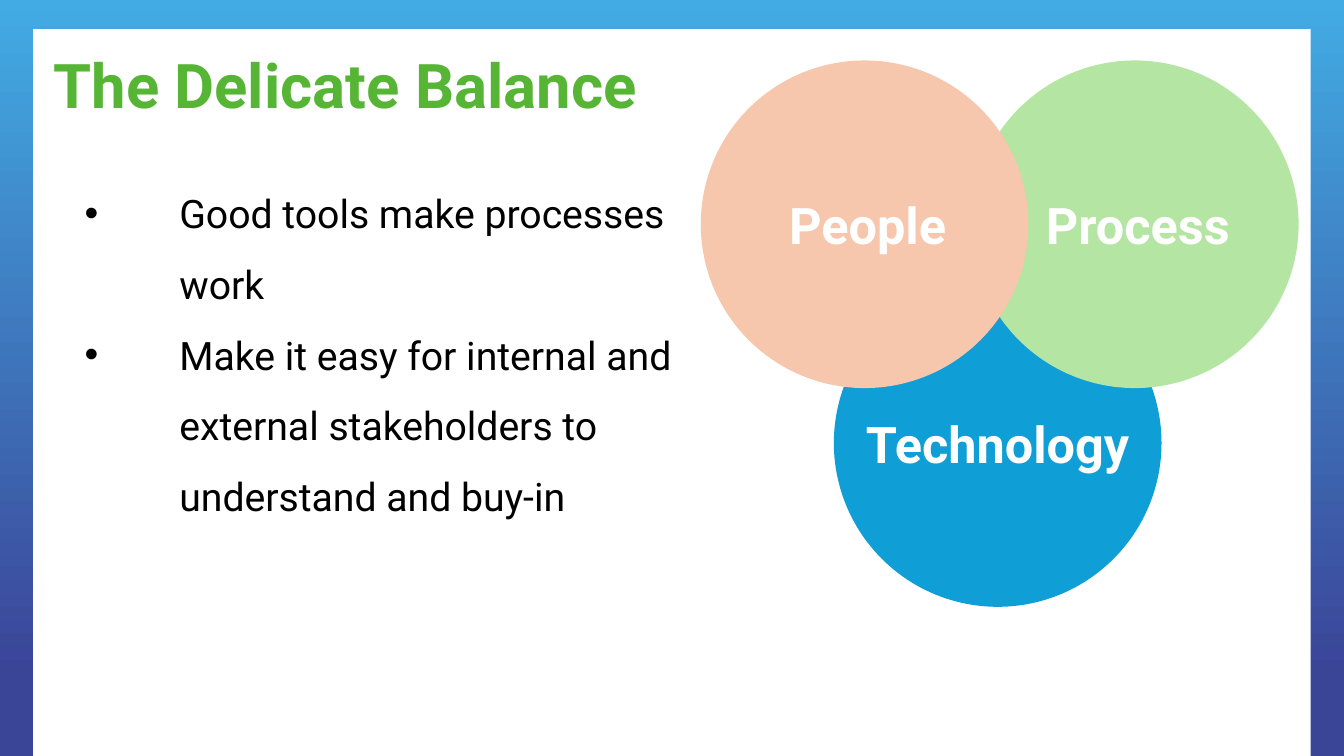
from lxml import etree
from pptx import Presentation
from pptx.dml.color import RGBColor
from pptx.enum.shapes import MSO_SHAPE
from pptx.enum.text import MSO_ANCHOR, PP_ALIGN
from pptx.oxml.ns import qn
from pptx.util import Inches, Pt

RECT, OVAL = MSO_SHAPE.RECTANGLE, MSO_SHAPE.OVAL
MID, LEFT, CENTER = MSO_ANCHOR.MIDDLE, PP_ALIGN.LEFT, PP_ALIGN.CENTER

# Content
TITLE = "The Delicate Balance"
POINTS = [
    "Good tools make processes work",
    "Make it easy for internal and external stakeholders to understand and buy-in",
]
# name, circle left, circle top, label inset from the circle's left
CIRCLES = [
    ("Technology", 8.27, 2.77, 0),
    ("Process", 9.63, 0.6, 0.06),
    ("People", 6.95, 0.6, 0.06),
]

# Style
COLORS = {
    "Technology": "0F9ED5", "Process": "B4E5A2", "People": "F6C6AD",
    "sky": "42ABE3", "navy": "3B4598", "title": "57B535",
    "white": "FFFFFF", "black": "000000",
}
FONTS = {
    "title": {"name": "Roboto", "size": Pt(44), "bold": True},
    "body": {"name": "Roboto", "size": Pt(28), "bold": False},
    "label": {"name": "Roboto", "size": Pt(36), "bold": True},
}
WIDE, HIGH = 13.33, 7.5
EDGE, TOP = 0.33, 0.29
SIZE, LABEL = 3.25, 0.49
INDENT = 0.94


def rgb(name):
    return RGBColor.from_string(COLORS[name])


def box(*spans):
    return [Inches(n) for n in spans]


def style(para, kind, color, align=LEFT):
    para.alignment = align
    for key, value in FONTS[kind].items():
        setattr(para.font, key, value)
    para.font.color.rgb = rgb(color)


def draw(form, spans, color=None):
    shape = slide.shapes.add_shape(form, *box(*spans))
    shape.shadow.inherit = False
    shape.line.fill.background()
    if color:
        shape.fill.solid()
        shape.fill.fore_color.rgb = rgb(color)
    return shape


def write(spans):
    frame = slide.shapes.add_textbox(*box(*spans)).text_frame
    frame.word_wrap = True
    return frame


deck = Presentation()
deck.slide_width, deck.slide_height = box(WIDE, HIGH)
slide = deck.slides.add_slide(deck.slide_layouts[5])

# Gradient border around a white panel
fill = draw(RECT, (0, 0, WIDE, HIGH)).fill
fill.gradient()
fill.gradient_angle = 270
for stop, (spot, color) in zip(fill.gradient_stops, [(0, "sky"), (0.89, "navy")]):
    stop.position = spot
    stop.color.rgb = rgb(color)
draw(RECT, (EDGE, TOP, WIDE - 2 * EDGE, HIGH - TOP), "white")

# Title, raised above the panel
title = slide.shapes.title
slide.shapes.element.append(title.element)
title.left, title.top, title.width, title.height = box(0.43, 0.4, 12.45, 0.96)
title.text_frame.text = TITLE
title.text_frame.vertical_anchor = MID
para = title.text_frame.paragraphs[0]
para.line_spacing = 0.9
style(para, "title", "title")

# Bullets
frame = write((0.74, 1.6, 6.42, 3.56))
frame.text = "\n".join(POINTS)
for para in frame.paragraphs:
    para.line_spacing = 1.5
    props = para._p.get_or_add_pPr()
    props.set("marL", str(Inches(INDENT)))
    props.set("indent", str(-Inches(INDENT)))
    etree.SubElement(props, qn("a:buFont")).set("typeface", "Arial")
    etree.SubElement(props, qn("a:buChar")).set("char", "•")
    style(para, "body", "black")

# Circles first, then their labels
for name, left, top, inset in CIRCLES:
    draw(OVAL, (left, top, SIZE, SIZE), name)
for name, left, top, inset in CIRCLES:
    middle = top + (SIZE - LABEL) / 2
    frame = write((left + inset, middle, SIZE - inset, LABEL))
    for side in ("left", "right", "top", "bottom"):
        setattr(frame, "margin_" + side, Inches(0.06))
    frame.vertical_anchor = MID
    frame.text = name
    style(frame.paragraphs[0], "label", "white", CENTER)

deck.save("out.pptx")
